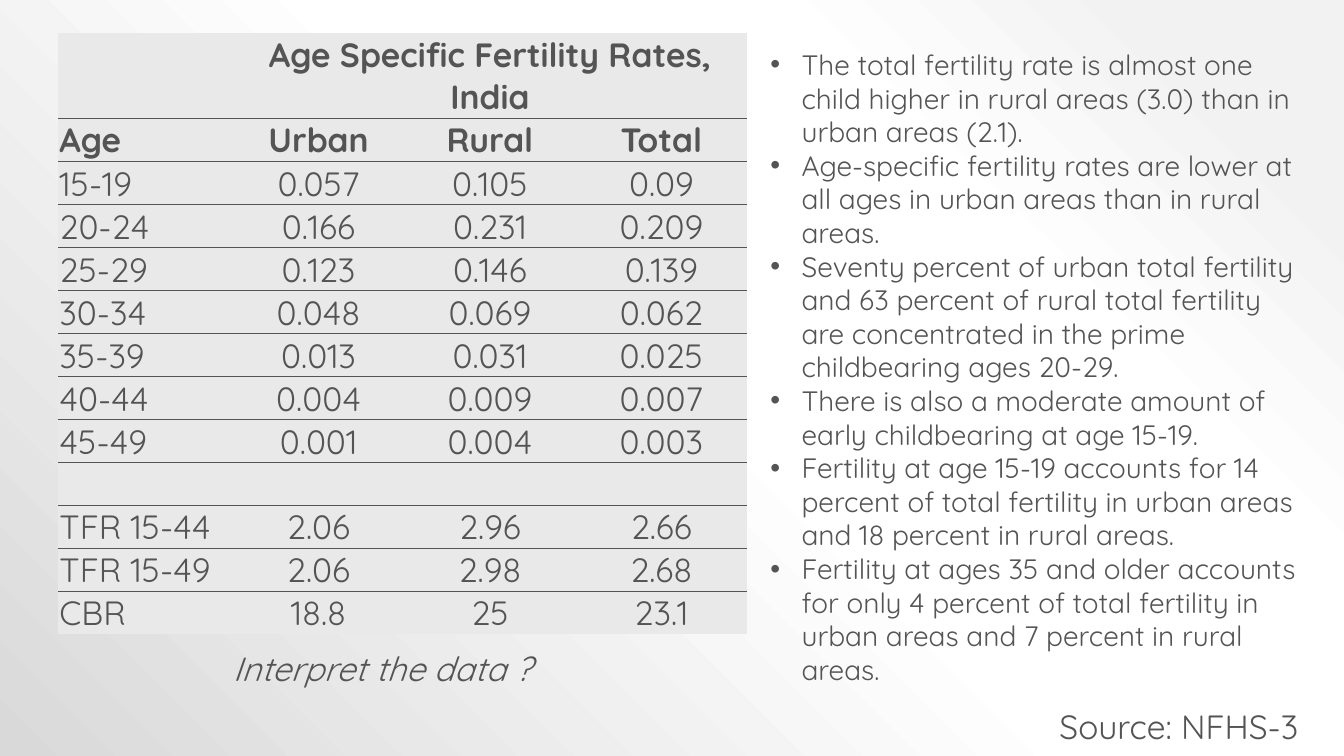
from lxml.etree import SubElement
from pptx import Presentation
from pptx.dml.color import RGBColor
from pptx.enum.text import MSO_ANCHOR, MSO_AUTO_SIZE, PP_ALIGN
from pptx.oxml import parse_xml
from pptx.oxml.ns import nsdecls, qn
from pptx.util import Inches, Pt

COLORS = {"text": "545454", "cell": "E9E9E9", "edge": "F2F2F2", "light": "FFFFFF", "dark": "D9D9D9"}
STOPS = [(10, "edge"), (28, "light"), (48, "light"), (100, "dark")]
NO_STYLE = "{2D5ABB26-0587-4C30-8999-92F81FD0307C}"

RATES = [
    ["", "Age Specific Fertility Rates, India", "", ""],
    ["Age", "Urban", "Rural", "Total"],
    ["15-19", "0.057", "0.105", "0.09"],
    ["20-24", "0.166", "0.231", "0.209"],
    ["25-29", "0.123", "0.146", "0.139"],
    ["30-34", "0.048", "0.069", "0.062"],
    ["35-39", "0.013", "0.031", "0.025"],
    ["40-44", "0.004", "0.009", "0.007"],
    ["45-49", "0.001", "0.004", "0.003"],
    ["", "", "", ""],
    ["TFR 15-44", "2.06", "2.96", "2.66"],
    ["TFR 15-49", "2.06", "2.98", "2.68"],
    ["CBR", "18.8", "25", "23.1"],
]
FINDINGS = [
    "The total fertility rate is almost one child higher in rural areas (3.0) than in urban areas (2.1).",
    "Age-specific fertility rates are lower at all ages in urban areas than in rural areas.",
    "Seventy percent of urban total fertility and 63 percent of rural total fertility "
    "are concentrated in the prime childbearing ages 20-29.",
    "There is also a moderate amount of early childbearing at age 15-19.",
    "Fertility at age 15-19 accounts for 14 percent of total fertility in urban areas "
    "and 18 percent in rural areas.",
    "Fertility at ages 35 and older accounts for only 4 percent of total fertility "
    "in urban areas and 7 percent in rural areas.",
]


class Deck:
    """Holds the text style and the current slide."""

    def __init__(self, font="Quicksand"):
        self.font = font
        self.prs = Presentation()
        self.prs.slide_width, self.prs.slide_height = Inches(13.33), Inches(7.5)
        self.s = self.prs.slides.add_slide(self.prs.slide_layouts[1])
        title = self.s.shapes.title._element
        title.getparent().remove(title)

    def background(self, stops):
        """Fill the background with a gradient centred on the top right corner."""
        fill = self.s.background.fill
        fill.solid()
        gs = "".join(f'<a:gs pos="{pos * 1000}"><a:srgbClr val="{COLORS[name]}"/></a:gs>' for pos, name in stops)
        grad = parse_xml(
            f'<a:gradFill {nsdecls("a")} rotWithShape="1"><a:gsLst>{gs}</a:gsLst>'
            '<a:path path="circle"><a:fillToRect l="100000" b="100000"/></a:path></a:gradFill>')
        solid = self.s._element.find(".//" + qn("a:solidFill"))
        solid.getparent().replace(solid, grad)

    def style(self, p, size, bold=False, italic=False):
        """Format the runs of a paragraph."""
        for r in p.runs:
            r.font.name, r.font.size = self.font, Pt(size)
            r.font.bold, r.font.italic = bold, italic
            r.font.color.rgb = RGBColor.from_string(COLORS["text"])

    def label(self, text, x, y, w, h, align=PP_ALIGN.LEFT, italic=False):
        """Add a one-line text box."""
        tf = self.s.shapes.add_textbox(Inches(x), Inches(y), Inches(w), Inches(h)).text_frame
        tf.word_wrap = False
        tf.text = text
        p = tf.paragraphs[0]
        p.alignment, p.line_spacing = align, 0.9
        self.style(p, 24, italic=italic)

    def bullets(self, items, x, y, w, h):
        """Put a bulleted list in the body placeholder."""
        sp = self.s.placeholders[1]
        sp.left, sp.top, sp.width, sp.height = Inches(x), Inches(y), Inches(w), Inches(h)
        tf = sp.text_frame
        tf.auto_size = MSO_AUTO_SIZE.NONE
        tf.text = "\n".join(items)
        for p in tf.paragraphs:
            pPr = p._p.get_or_add_pPr()
            pPr.set("marL", str(Inches(0.31)))
            pPr.set("indent", str(-Inches(0.31)))
            p.space_before, p.line_spacing = Pt(0), Pt(24)
            self.style(p, 20)

    def rule(self, cell):
        """Draw the bottom border of a cell."""
        ln = parse_xml(
            f'<a:lnB {nsdecls("a")} w="{Pt(1)}"><a:solidFill>'
            f'<a:srgbClr val="{COLORS["text"]}"/></a:solidFill></a:lnB>')
        cell._tc.get_or_add_tcPr().insert(0, ln)

    def table(self, rows, x, y, widths, heights):
        """Add a ruled table with a heading spanning all but the first column."""
        tbl = self.s.shapes.add_table(
            len(rows), len(widths), Inches(x), Inches(y), Inches(sum(widths)), Inches(sum(heights))).table
        tbl.first_row = tbl.horz_banding = False
        tblPr = tbl._tbl.tblPr
        tblPr.remove(tblPr.find(qn("a:tableStyleId")))
        SubElement(tblPr, qn("a:tableStyleId")).text = NO_STYLE
        for col, width in zip(tbl.columns, widths):
            col.width = Inches(width)
        for i, (row, height) in enumerate(zip(rows, heights)):
            tbl.rows[i].height = Inches(height)
            for j, text in enumerate(row):
                cell = tbl.cell(i, j)
                cell.text = text
                cell.vertical_anchor = MSO_ANCHOR.BOTTOM
                cell.margin_left = cell.margin_right = cell.margin_top = Inches(0.01)
                cell.margin_bottom = 0
                cell.fill.solid()
                cell.fill.fore_color.rgb = RGBColor.from_string(COLORS["cell"])
                p = cell.text_frame.paragraphs[0]
                p.alignment = PP_ALIGN.CENTER if j else PP_ALIGN.LEFT
                self.style(p, 24, bold=i < 2)
                if i < len(rows) - 1:
                    self.rule(cell)
        tbl.cell(0, 1).merge(tbl.cell(0, len(widths) - 1))


def main():
    """Build the fertility rates slide."""
    deck = Deck()
    deck.background(STOPS)
    deck.table(RATES, 0.58, 0.33, [1.73] + [1.7] * 3, [0.84] + [0.42] * 12)
    deck.label("Source: NFHS-3", 10.41, 7, 2.63, 0.46)
    deck.bullets(FINDINGS, 7.54, 0.42, 5.5, 6.5)
    deck.label("Interpret the data ?", 2.09, 6.42, 3.4, 0.46, PP_ALIGN.CENTER, italic=True)
    deck.prs.save("out.pptx")


if __name__ == "__main__":
    main()
